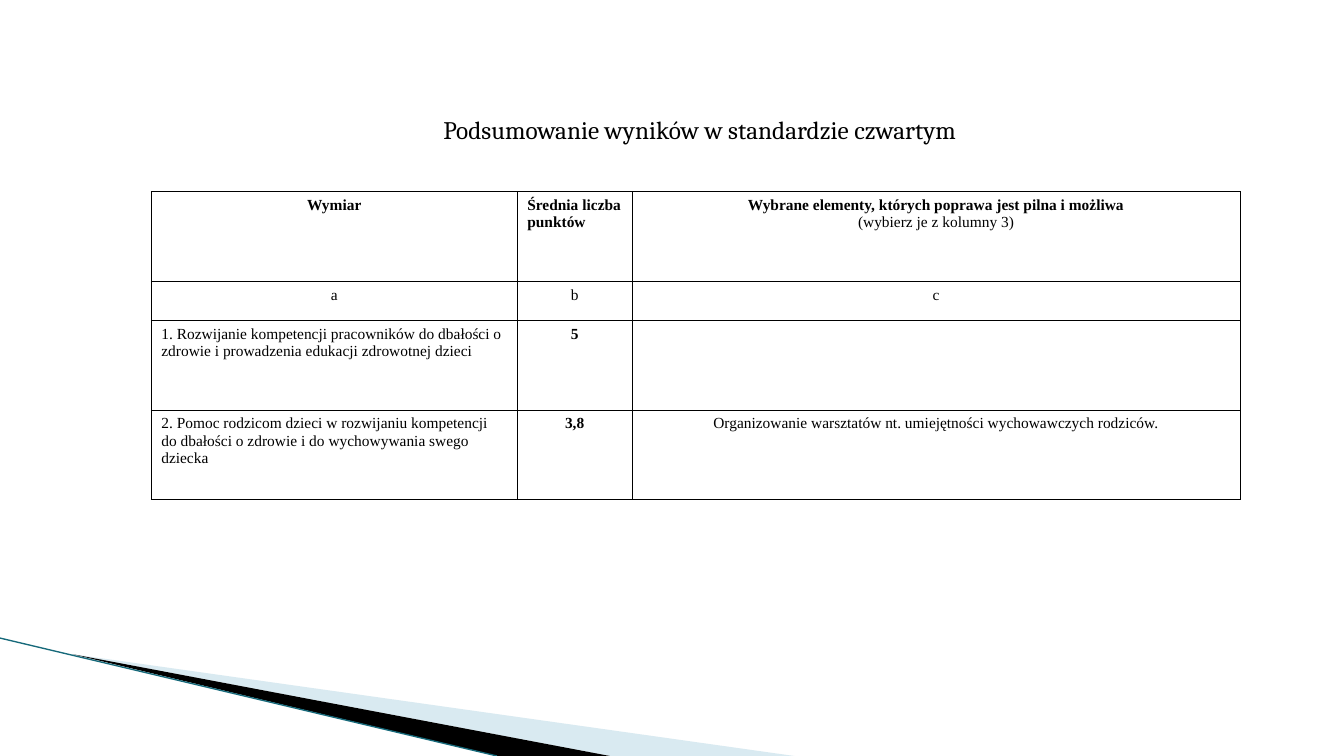
import pptx
import pptx.util
import pptx.dml.color
import pptx.enum.shapes
import pptx.enum.text
import pptx.oxml
import pptx.oxml.ns
from pptx.util import Inches

CENTER = pptx.enum.text.PP_ALIGN.CENTER
LEFT = pptx.enum.text.PP_ALIGN.LEFT
BLACK = "000000"
NAMESPACE = pptx.oxml.ns.nsdecls("a")

COLUMN_WIDTHS = [3.63, 1.14, 6.03]
ROW_HEIGHTS = [0.89, 0.39, 0.89, 0.89]
# Each cell: alignment and its paragraphs as (text, bold)
SUMMARY_ROWS = [
    [
        (CENTER, [("Wymiar", True)]),
        (LEFT, [("Średnia liczba punktów", True)]),
        (CENTER, [("Wybrane elementy, których poprawa jest pilna i możliwa", True),
                  ("(wybierz je z kolumny 3)", False)]),
    ],
    [(CENTER, [(letter, False)]) for letter in "abc"],
    [
        (LEFT, [("1. Rozwijanie kompetencji pracowników do dbałości o zdrowie "
                 "i prowadzenia edukacji zdrowotnej dzieci", False)]),
        (CENTER, [("5", True)]),
        (LEFT, [("", False)]),
    ],
    [
        (LEFT, [("2. Pomoc rodzicom dzieci w rozwijaniu kompetencji do dbałości "
                 "o zdrowie i do wychowywania swego dziecka", False)]),
        (CENTER, [("3,8", True)]),
        (CENTER, [("Organizowanie warsztatów nt. umiejętności wychowawczych rodziców.",
                   False)]),
    ],
]


def color(value):
    return pptx.dml.color.RGBColor.from_string(value)


def write_paragraph(paragraph, text, alignment, font_format):
    paragraph.alignment = alignment
    run = paragraph.add_run()
    run.text = text
    for font in (paragraph.font, run.font):
        for name, value in font_format.items():
            setattr(font, name, value)
        font.color.rgb = color(BLACK)


def add_wedge(slide, points, fill, opacity=100):
    """Draw a closed filled outline through points given in inches."""
    corners = [(Inches(x), Inches(y)) for x, y in points]
    builder = slide.shapes.build_freeform(*corners[0])
    builder.add_line_segments(corners[1:], close=True)
    wedge = builder.convert_to_shape()
    wedge.shadow.inherit = False
    wedge.line.fill.background()
    wedge.fill.solid()
    wedge.fill.fore_color.rgb = color(fill)
    if opacity < 100:
        fill_color = wedge.fill._xPr.find(".//" + pptx.oxml.ns.qn("a:srgbClr"))
        fill_color.append(pptx.oxml.parse_xml(
            f'<a:alpha {NAMESPACE} val="{opacity * 1000}"/>'))


def add_corner_decoration(slide, left, top, width, height):
    """Draw the wedges and edge line running down from the left side."""
    bottom = top + height
    tip = (left + 0.72, top + 0.16)
    black_left, black_right = left + 4.93, left + 6.05
    add_wedge(slide, [tip, (left + width, bottom), (black_right, bottom)], "A0CBDC", 40)
    add_wedge(slide, [tip, (black_right, bottom), (black_left, bottom)], BLACK)
    edge = slide.shapes.add_connector(
        pptx.enum.shapes.MSO_CONNECTOR.STRAIGHT,
        Inches(left), Inches(top), Inches(black_left), Inches(bottom))
    edge.line.color.rgb = color("16697A")
    edge.line.width = pptx.util.Pt(0.95)
    edge._element.spPr.append(pptx.oxml.parse_xml(f"<a:effectLst {NAMESPACE}/>"))


def add_title(slide, left, top, width, height):
    title = slide.shapes.add_textbox(
        Inches(left), Inches(top), Inches(width), Inches(height))
    title.text_frame.word_wrap = True
    write_paragraph(title.text_frame.paragraphs[0],
                    "Podsumowanie wyników w standardzie czwartym", CENTER,
                    {"name": "Cambria", "size": pptx.util.Pt(18)})


def add_cell_borders(cell):
    properties = cell._tc.get_or_add_tcPr()
    for position, side in enumerate(("lnL", "lnR", "lnT", "lnB")):
        properties.insert(position, pptx.oxml.parse_xml(
            f'<a:{side} {NAMESPACE} w="{pptx.util.Pt(0.75)}"><a:solidFill>'
            f'<a:srgbClr val="{BLACK}"/></a:solidFill></a:{side}>'))


def add_summary_table(slide, left, top, width, height):
    table = slide.shapes.add_table(
        len(ROW_HEIGHTS), len(COLUMN_WIDTHS),
        Inches(left), Inches(top), Inches(width), Inches(height)).table
    table.first_row = table.horz_banding = False
    for column, share in zip(table.columns, COLUMN_WIDTHS):
        column.width = Inches(width * share / sum(COLUMN_WIDTHS))
    for row, share, contents in zip(table.rows, ROW_HEIGHTS, SUMMARY_ROWS):
        row.height = Inches(height * share / sum(ROW_HEIGHTS))
        for cell, (alignment, lines) in zip(row.cells, contents):
            cell.fill.background()
            add_cell_borders(cell)
            frame = cell.text_frame
            for number, (text, bold) in enumerate(lines):
                paragraph = frame.add_paragraph() if number else frame.paragraphs[0]
                write_paragraph(paragraph, text, alignment, {
                    "name": "Times New Roman", "size": pptx.util.Pt(11), "bold": bold})


def main():
    presentation = pptx.Presentation()
    presentation.slide_width = Inches(13.33)
    presentation.slide_height = Inches(7.5)
    slide = presentation.slides.add_slide(presentation.slide_layouts[6])
    slide.background.fill.solid()
    slide.background.fill.fore_color.rgb = color("FFFFFF")
    add_corner_decoration(slide, 0, 6.33, 7.88, 1.17)
    add_summary_table(slide, 1.5, 1.9, 10.8, 3.06)
    add_title(slide, 1.4, 1.08, 11.08, 0.71)
    presentation.save("out.pptx")


if __name__ == "__main__":
    main()
